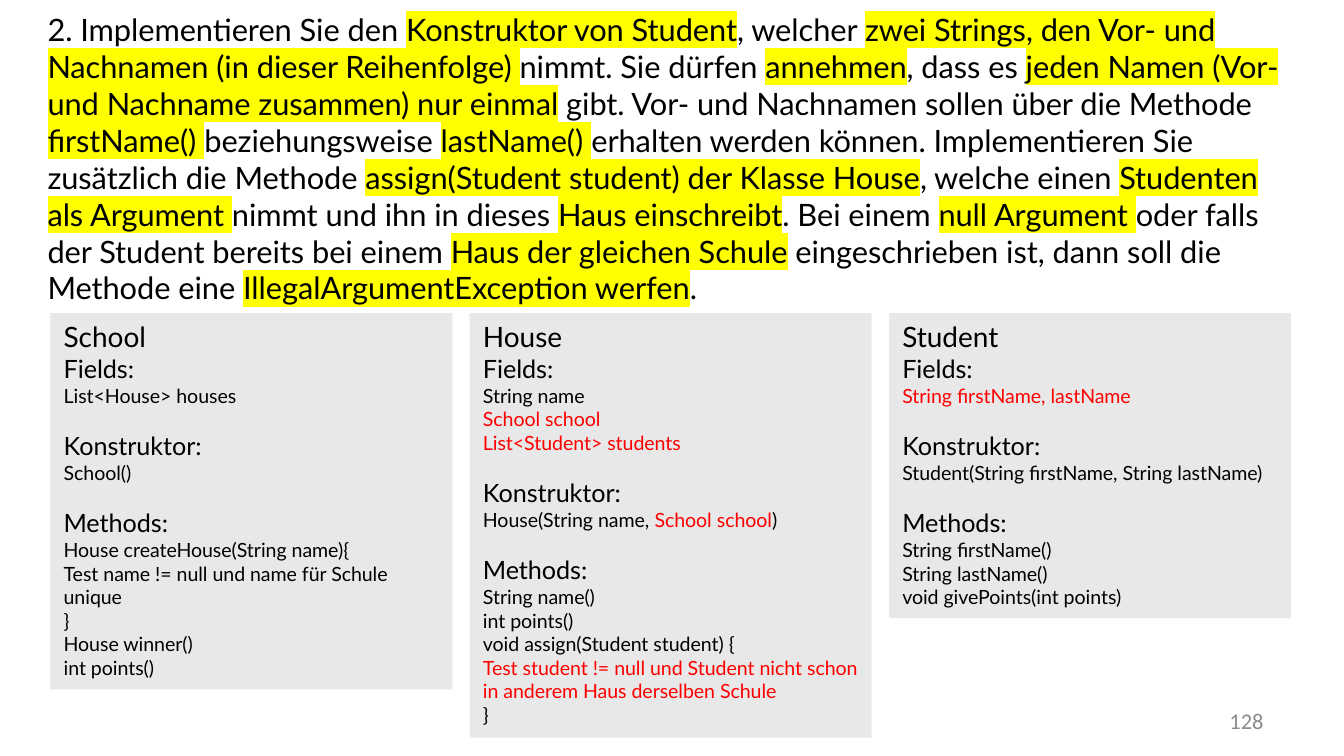
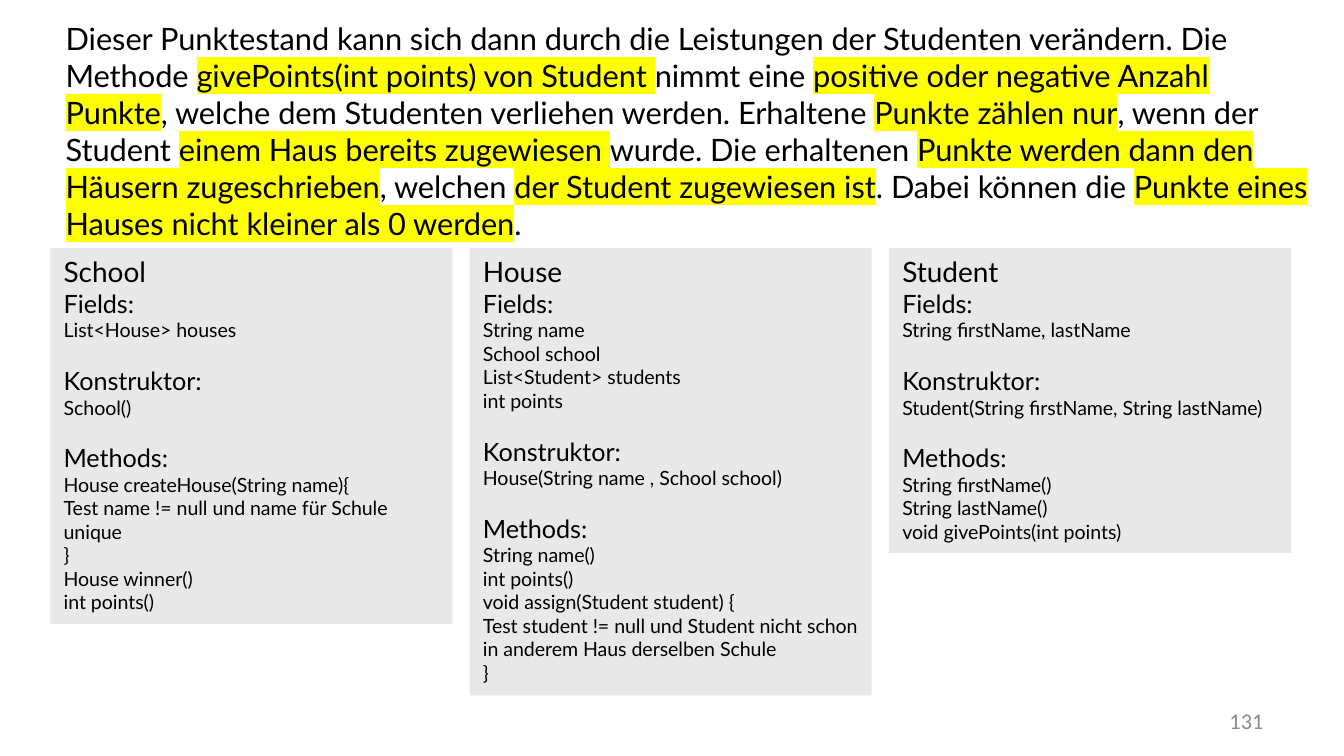
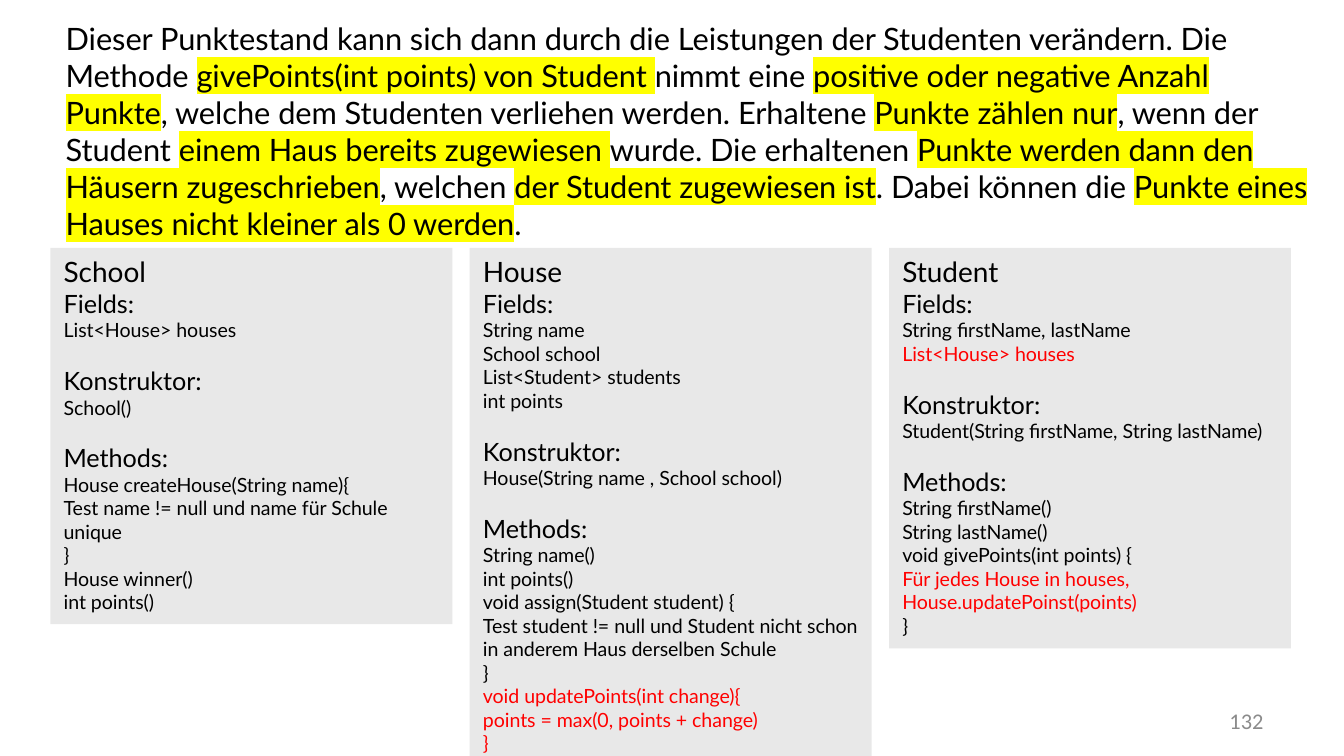
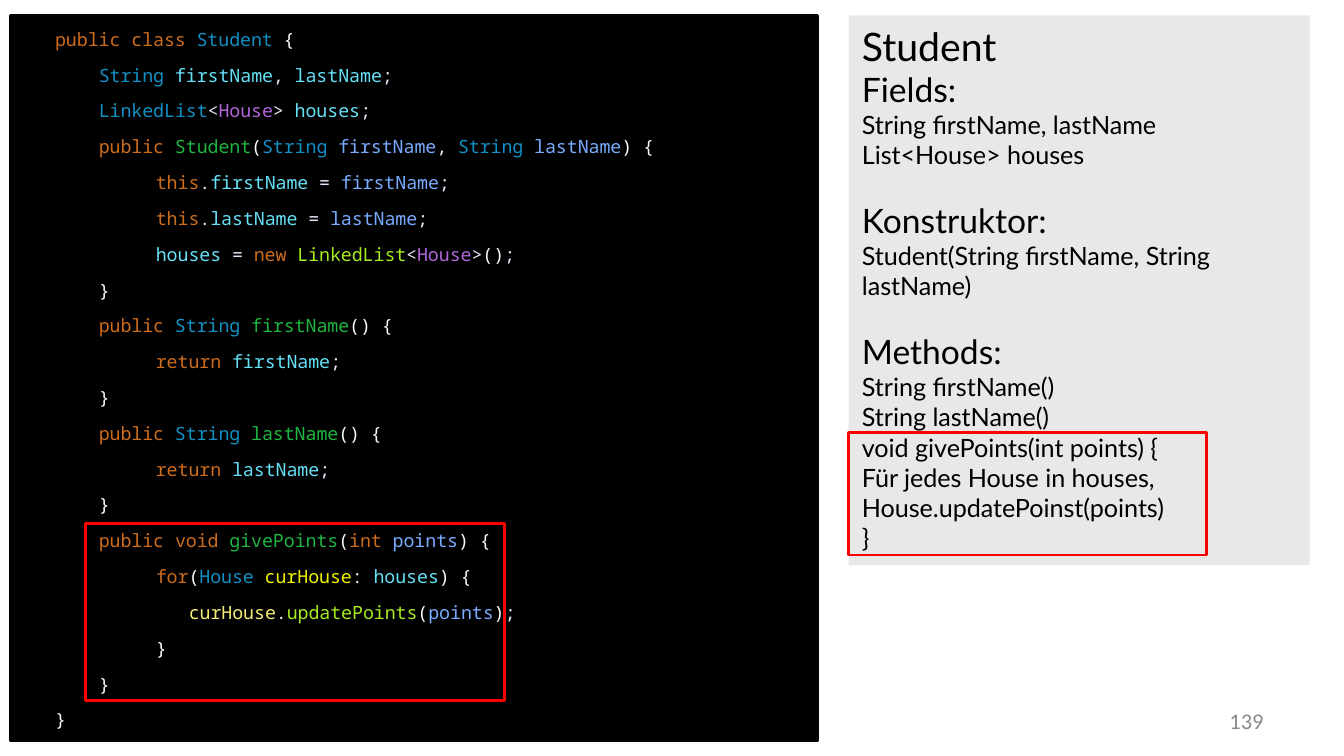
from pptx import Presentation
from pptx.dml.color import RGBColor
from pptx.enum.shapes import MSO_SHAPE
from pptx.enum.text import MSO_ANCHOR, MSO_AUTO_SIZE, PP_ALIGN
from pptx.oxml.xmlchemy import OxmlElement
from pptx.util import Emu, Pt

SCALE = 4572  # EMU per px, 200 px to the inch

BLACK = RGBColor(0x00, 0x00, 0x00)
RED = RGBColor(0xFF, 0x00, 0x00)
CARD_GREY = RGBColor(0xE8, 0xE8, 0xE8)
NUMBER_GREY = RGBColor(0x8B, 0x8B, 0x8B)
HIGHLIGHT = "FFFF00"

# Syntax colours
KEYWORD = RGBColor(0xCC, 0x6C, 0x1D)
TYPE = RGBColor(0x12, 0x90, 0xC3)
FIELD = RGBColor(0x66, 0xE1, 0xF8)
PARAM = RGBColor(0x79, 0xAB, 0xFF)
METHOD = RGBColor(0x1E, 0xB5, 0x40)
CALL = RGBColor(0xA7, 0xEC, 0x21)
GENERIC = RGBColor(0xB1, 0x66, 0xDA)
LOCAL = RGBColor(0xF2, 0xF2, 0x00)
LOCAL_USE = RGBColor(0xF3, 0xEC, 0x79)
SIGN = RGBColor(0xE6, 0xE6, 0xFA)
BRACE = RGBColor(0xF9, 0xFA, 0xF4)
WHITE = RGBColor(0xFF, 0xFF, 0xFF)

TEXT_FONT = "Lato"
CODE_FONT = "Noto Sans Mono"
NUMBER_FONT = "Calibri"
CARD_SIZES = (15, 13.5, 10.5)  # name, section, entry
LARGE_CARD_SIZES = (21, 18, 13.5)
CARD_LEFT, CARD_WIDTH, CARD_STEP = 75, 598, 624
SECTIONS = ("Fields:", "Konstruktor:", "Methods:")
CODE_INDENTS = (0, 65, 150, 199)

# Parts between asterisks are marked: highlighted in a task, red in a card
CONSTRUCTOR_TASK = (
    "2. Implementieren Sie den *Konstruktor von Student*, welcher *zwei Strings, den Vor- und "
    "Nachnamen (in dieser Reihenfolge) *nimmt. Sie dürfen *annehmen*, dass es *jeden Namen "
    "(Vor-und Nachname zusammen) nur einmal* gibt. Vor- und Nachnamen sollen über die Methode "
    "*firstName() *beziehungsweise *lastName() *erhalten werden können. Implementieren Sie "
    "zusätzlich die Methode *assign(Student student) der Klasse House*, welche einen *Studenten "
    "als Argument *nimmt und ihn in dieses *Haus einschreibt*. Bei einem *null Argument *oder "
    "falls der Student bereits bei einem *Haus der gleichen Schule* eingeschrieben ist, dann "
    "soll die Methode eine *IllegalArgumentException werfen*.")
POINTS_TASK = (
    "Dieser Punktestand kann sich dann durch die Leistungen der Studenten verändern. Die Methode "
    "*givePoints(int points) von Student *nimmt eine *positive oder negative Anzahl Punkte*, "
    "welche dem Studenten verliehen werden. Erhaltene *Punkte zählen nur*, wenn der Student "
    "*einem Haus bereits zugewiesen *wurde. Die erhaltenen *Punkte werden dann den Häusern "
    "zugeschrieben*, welchen *der Student zugewiesen ist*. Dabei können die *Punkte eines Hauses "
    "nicht kleiner als 0 werden*.")

# Entries of the class cards: fields, constructor, methods
NAMES = "String firstName, lastName"
HOUSES = "List<House> houses"
STUDENT_NEW = ["Student(String firstName, String lastName)"]
GETTERS = ["String firstName()", "String lastName()"]
GIVE_POINTS = "void givePoints(int points)"
UPDATE_HOUSES = "Für jedes House in houses, House.updatePoinst(points)"
HOUSE_METHODS = ["String name()", "int points()", "void assign(Student student) {"]
ASSIGN_TEST = "Test student != null und Student nicht schon in anderem Haus derselben Schule"

SCHOOL = ("School", [HOUSES], ["School()"],
          ["House createHouse(String name){", "Test name != null und name für Schule unique",
           "}", "House winner()", "int points()"])
HOUSE_FIELDS = ["String name", "School school", "List<Student> students", "int points"]
HOUSE_NEW = ["House(String name , School school)"]
HOUSE_ASSIGN = HOUSE_METHODS + [ASSIGN_TEST, "}"]
NEW_HOUSE = ("House", ["String name", "*School school*", "*List<Student> students*"],
             ["House(String name, *School school*)"],
             HOUSE_METHODS + [f"*{ASSIGN_TEST}*", "}"])
POINTS_HOUSE = ("House", HOUSE_FIELDS, HOUSE_NEW, HOUSE_ASSIGN)
UPDATE_HOUSE = ("House", HOUSE_FIELDS, HOUSE_NEW,
                HOUSE_ASSIGN + ["*void updatePoints(int change){*",
                                "*points = max(0, points + change)*", "*}*"])
NEW_STUDENT = ("Student", [f"*{NAMES}*"], STUDENT_NEW, GETTERS + [GIVE_POINTS])
POINTS_STUDENT = ("Student", [NAMES], STUDENT_NEW, GETTERS + [GIVE_POINTS])
UPDATE_STUDENT = ("Student", [NAMES, f"*{HOUSES}*"], STUDENT_NEW,
                  GETTERS + [GIVE_POINTS + " {", f"*{UPDATE_HOUSES}*", "}"])
FINAL_STUDENT = ("Student", [NAMES, HOUSES], STUDENT_NEW,
                 GETTERS + [GIVE_POINTS + " {", UPDATE_HOUSES, "}"])


def assignment(name):
    return (2, ("this", KEYWORD), (".", SIGN), (name + " ", FIELD), ("= ", SIGN),
            (name, PARAM), (";", SIGN))


def getter(name):
    return [(1, ("public ", KEYWORD), ("String ", TYPE), (name, METHOD), ("() {", BRACE)),
            (2, ("return ", KEYWORD), (name, FIELD), (";", SIGN))]


def closing(level, color=BRACE):
    return (level, ("}", color))


# Code lines: indent level, then coloured parts
STUDENT_CODE = [
    (0, ("public class ", KEYWORD), ("Student ", TYPE), ("{", BRACE)),
    (1, ("String ", TYPE), ("firstName", FIELD), (", ", SIGN), ("lastName", FIELD), (";", SIGN)),
    (1, ("LinkedList", TYPE), ("<", SIGN), ("House", GENERIC), ("> ", SIGN), ("houses", FIELD),
     (";", SIGN)),
    (1, ("public ", KEYWORD), ("Student", METHOD), ("(", BRACE), ("String ", TYPE),
     ("firstName", PARAM), (", ", SIGN), ("String ", TYPE), ("lastName", PARAM), (") {", BRACE)),
    assignment("firstName"),
    assignment("lastName"),
    (2, ("houses ", FIELD), ("= ", SIGN), ("new ", KEYWORD), ("LinkedList", CALL), ("<", SIGN),
     ("House", GENERIC), (">", SIGN), ("()", BRACE), (";", SIGN)),
    closing(1),
    *getter("firstName"),
    closing(1),
    *getter("lastName"),
    closing(1, WHITE),
    (1, ("public void ", KEYWORD), ("givePoints", METHOD), ("(", BRACE), ("int ", KEYWORD),
     ("points", PARAM), (") {", BRACE)),
    (2, ("for", KEYWORD), ("(", BRACE), ("House ", TYPE), ("curHouse", LOCAL), (": ", SIGN),
     ("houses", FIELD), (") {", BRACE)),
    (3, ("curHouse", LOCAL_USE), (".", SIGN), ("updatePoints", CALL), ("(", BRACE),
     ("points", PARAM), (")", BRACE), (";", SIGN)),
    closing(2),
    closing(1),
    closing(0),
]


def px(*lengths):
    return [Emu(length * SCALE) for length in lengths]


def format_frame(shape, **values):
    defaults = {"word_wrap": True, "vertical_anchor": MSO_ANCHOR.TOP}
    for name, value in {**defaults, **values}.items():
        setattr(shape.text_frame, name, value)
    return shape.text_frame


def add_rect(page, box, fill=None, line=None):
    rect = page.shapes.add_shape(MSO_SHAPE.RECTANGLE, *px(*box))
    rect.shadow.inherit = False
    if fill is None:
        rect.fill.background()
    else:
        rect.fill.solid()
        rect.fill.fore_color.rgb = fill
    if line is None:
        rect.line.fill.background()
    else:
        rect.line.color.rgb = line
        rect.line.width = Pt(1.5)
    return rect


def next_para(frame, align=PP_ALIGN.LEFT):
    first = frame.paragraphs[0]
    para = frame.add_paragraph() if first.runs else first
    para.alignment = align
    return para


def add_span(para, text, size, color=BLACK, font=TEXT_FONT, highlight=None):
    span = para.add_run()
    span.text = text
    for name, value in {"size": Pt(size), "name": font}.items():
        setattr(span.font, name, value)
    span.font.color.rgb = color
    if highlight:
        mark = OxmlElement("a:highlight")
        tone = OxmlElement("a:srgbClr")
        tone.set("val", highlight)
        mark.append(tone)
        span.font.fill._xPr.find("{*}solidFill").addnext(mark)


def add_marked(para, text, size, **marked):
    """Write text; parts between asterisks get the marked format."""
    for index, part in enumerate(text.split("*")):
        if part:
            add_span(para, part, size, **(marked if index % 2 else {}))


def add_task(page, box, text):
    frame = format_frame(page.shapes.add_textbox(*px(*box)),
                         auto_size=MSO_AUTO_SIZE.SHAPE_TO_FIT_TEXT)
    add_marked(next_para(frame), text, 16.5, highlight=HIGHLIGHT)


def add_card(page, box, card, sizes=CARD_SIZES):
    name_size, section_size, entry_size = sizes
    name, *groups = card
    frame = format_frame(add_rect(page, box, CARD_GREY),
                         auto_size=MSO_AUTO_SIZE.SHAPE_TO_FIT_TEXT)
    add_span(next_para(frame), name, name_size)
    for index, (section, entries) in enumerate(zip(SECTIONS, groups)):
        heading = next_para(frame)
        if index:
            heading.space_before = Pt(1.2 * entry_size)
        add_span(heading, section, section_size)
        for entry in entries:
            add_marked(next_para(frame), entry, entry_size, color=RED)


def add_code(page, box, lines):
    left, top, width, height = box
    add_rect(page, box, BLACK, BLACK)
    text_box = page.shapes.add_textbox(*px(left + 53, top - 2, width - 116, height - 10))
    side = Emu(14 * SCALE)
    frame = format_frame(text_box, margin_left=side, margin_right=side,
                         margin_top=0, margin_bottom=0)
    for level, *parts in lines:
        para = next_para(frame)
        para.line_spacing = Pt(19.2)
        para._p.get_or_add_pPr().set("marL", str(CODE_INDENTS[level] * SCALE))
        for text, color in parts:
            add_span(para, text, 9.75, color, CODE_FONT)


def add_page_number(page, number):
    frame = format_frame(page.shapes.add_textbox(*px(1434, 1043, 466, 60)),
                         vertical_anchor=MSO_ANCHOR.MIDDLE)
    add_span(next_para(frame, PP_ALIGN.RIGHT), str(number), 12, NUMBER_GREY, NUMBER_FONT)


def add_page(deck):
    return deck.slides.add_slide(deck.slide_layouts[6])


def add_task_page(deck, number, task_box, task, top, cards, heights):
    page = add_page(deck)
    for column, (card, height) in enumerate(zip(cards, heights)):
        left = CARD_LEFT + column * CARD_STEP
        add_card(page, (left, top, CARD_WIDTH, height), card)
    add_task(page, task_box, task)
    add_page_number(page, number)


def add_code_page(deck, number):
    page = add_page(deck)
    add_code(page, (15, 23, 1202, 1080), STUDENT_CODE)
    add_card(page, (1263, 23, 686, 818), FINAL_STUDENT, LARGE_CARD_SIZES)
    # Frames around givePoints in the code and in the card
    for frame_box in ((127, 779, 624, 264), (1263, 644, 532, 182)):
        add_rect(page, frame_box, line=RED)
    add_page_number(page, number)


def main():
    deck = Presentation()
    deck.slide_width, deck.slide_height = px(2000, 1125)
    add_task_page(deck, 128, (51, 6, 1898, 464), CONSTRUCTOR_TASK, 466,
                  (SCHOOL, NEW_HOUSE, NEW_STUDENT), (560, 632, 454))
    points_box = (78, 20, 1898, 354)
    add_task_page(deck, 131, points_box, POINTS_TASK, 369,
                  (SCHOOL, POINTS_HOUSE, POINTS_STUDENT), (560, 666, 454))
    add_task_page(deck, 132, points_box, POINTS_TASK, 369,
                  (SCHOOL, UPDATE_HOUSE, UPDATE_STUDENT), (560, 772, 596))
    add_code_page(deck, 139)
    deck.save("out.pptx")


if __name__ == "__main__":
    main()
